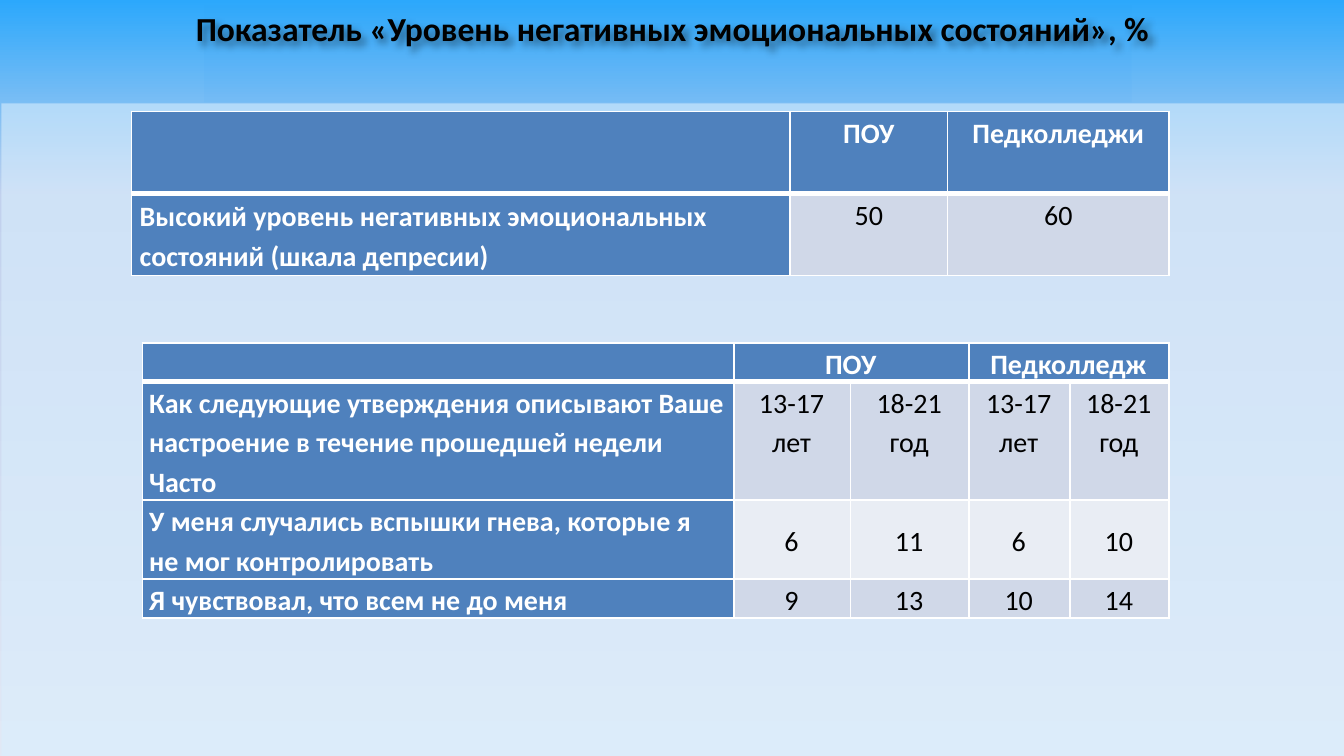
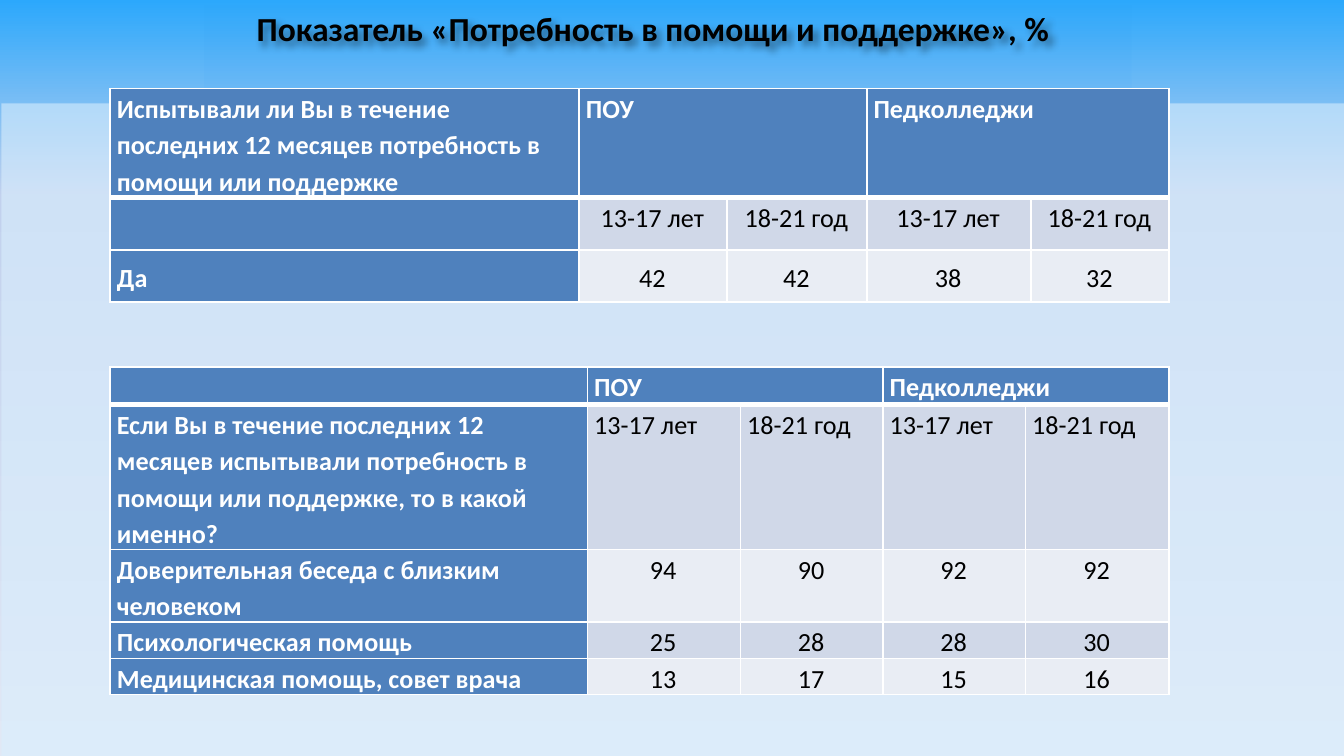
from dataclasses import dataclass

from lxml.etree import SubElement
from pptx import Presentation
from pptx.dml.color import RGBColor
from pptx.enum.shapes import MSO_SHAPE
from pptx.enum.text import MSO_ANCHOR, PP_ALIGN
from pptx.oxml import parse_xml
from pptx.oxml.ns import nsdecls, qn
from pptx.util import Inches, Pt


@dataclass(frozen=True)
class Theme:
    font: str = "Calibri"
    title_size: int = 18
    sky: tuple = ((0, "2CA8FC"), (26, "C2D1ED"), (100, "E1E8F5"))
    haze: str = "DAEFFE"
    title_band: str = "299AF7"
    accent: str = "4F81BD"
    row_bands: tuple = ("E9EDF4", "D0D8E8")
    light: str = "FFFFFF"
    dark: str = "000000"
    line_spacing: float = 1.15
    border: int = 1
    header_border: int = 3


@dataclass(frozen=True)
class Band:
    left: float
    top: float
    width: float
    height: float
    color: str
    opacity: int


@dataclass(frozen=True)
class SurveyTable:
    left: float
    top: float
    columns: tuple
    row_heights: tuple
    rows: tuple
    text_size: int
    header_align: PP_ALIGN = PP_ALIGN.CENTER
    ages_align: PP_ALIGN = PP_ALIGN.CENTER
    value_anchor: MSO_ANCHOR = MSO_ANCHOR.MIDDLE
    margin_left: float = 0.05

    @property
    def by_age(self) -> bool:
        return len(self.columns) == 5


@dataclass(frozen=True)
class Indicator:
    title: str
    title_width: float
    tables: tuple


THEME = Theme()
BANDS = (
    Band(0.01, 0.77, 9.99, 4.86, THEME.haze, 58),
    Band(1.52, 0.04, 6.9, 0.72, THEME.title_band, 5),
)
AGES = ("13-17 лет", "18-21 год") * 2

INDICATORS = (
    Indicator("Показатель «Уровень негативных эмоциональных состояний», %", 8.51, (
        SurveyTable(
            0.98, 0.83, (4.9, 1.17, 1.65), (0.61, 0.61),
            (
                ("", "ПОУ", "Педколледжи"),
                ("Высокий уровень негативных эмоциональных состояний (шкала депресии)",
                 "50", "60"),
            ),
            15, value_anchor=MSO_ANCHOR.TOP, margin_left=0.06,
        ),
        SurveyTable(
            1.06, 2.55, (4.4, 0.87, 0.88, 0.75, 0.74), (0.29, 0.88, 0.59, 0.29),
            (
                ("", "ПОУ", "", "Педколледж", ""),
                ("Как следующие утверждения описывают Ваше настроение "
                 "в течение прошедшей недели\nЧасто", *AGES),
                ("У меня случались вспышки гнева, которые я не мог контролировать",
                 "6", "11", "6", "10"),
                ("Я чувствовал, что всем не до меня", "9", "13", "10", "14"),
            ),
            15,
        ),
    )),
    Indicator("Показатель «Потребность в помощи и поддержке», %", 8.22, (
        SurveyTable(
            0.82, 0.66, (3.49, 1.1, 1.04, 1.22, 1.03), (0.81, 0.39, 0.39),
            (
                ("Испытывали ли Вы в течение последних 12 месяцев потребность "
                 "в помощи или поддержке", "ПОУ", "", "Педколледжи", ""),
                ("", *AGES),
                ("Да", "42", "42", "38", "32"),
            ),
            14, header_align=PP_ALIGN.LEFT,
        ),
        SurveyTable(
            0.82, 2.73, (3.55, 1.14, 1.06, 1.06, 1.07), (0.28, 1.08, 0.54, 0.27, 0.27),
            (
                ("", "ПОУ", "", "Педколледжи", ""),
                ("Если Вы в течение последних 12 месяцев испытывали потребность "
                 "в помощи или поддержке, то в какой именно?", *AGES),
                ("Доверительная беседа с близким человеком", "94", "90", "92", "92"),
                ("Психологическая помощь", "25", "28", "28", "30"),
                ("Медицинская помощь, совет врача", "13", "17", "15", "16"),
            ),
            14, header_align=PP_ALIGN.LEFT, ages_align=PP_ALIGN.LEFT,
            value_anchor=MSO_ANCHOR.TOP,
        ),
    )),
)


def rgb(color: str) -> RGBColor:
    return RGBColor.from_string(color)


def paint_sky(master) -> None:
    """Give every slide the three-colour vertical gradient."""
    fill = master.background.fill
    fill.gradient()
    fill.gradient_angle = 270
    stops = master.element.find(".//" + qn("a:gsLst"))
    for stop in list(stops):
        stops.remove(stop)
    for position, color in THEME.sky:
        stop = SubElement(stops, qn("a:gs"), pos=str(position * 1000))
        SubElement(stop, qn("a:srgbClr"), val=color)


def add_band(slide, band: Band) -> None:
    shape = slide.shapes.add_shape(
        MSO_SHAPE.RECTANGLE, Inches(band.left), Inches(band.top),
        Inches(band.width), Inches(band.height))
    shape.shadow.inherit = False
    shape.line.fill.background()
    shape.fill.solid()
    shape.fill.fore_color.rgb = rgb(band.color)
    color = shape.element.spPr.find(qn("a:solidFill"))[0]
    SubElement(color, qn("a:alpha"), val=str(band.opacity * 1000))


def set_font(paragraph, size: int, color: str, bold: bool) -> None:
    font = paragraph.font
    font.name = THEME.font
    font.size = Pt(size)
    font.bold = bold
    font.color.rgb = rgb(color)


def add_title(slide, text: str, width: float) -> None:
    """Write the title; the unfilled box casts its shadow from the letters."""
    box = slide.shapes.add_textbox(
        Inches(0.75), Inches(0.06), Inches(width), Inches(0.46))
    box.element.spPr.append(parse_xml(
        f'<a:effectLst {nsdecls("a")}><a:outerShdw blurRad="50800" dist="38100" '
        f'dir="2700000" algn="tl" rotWithShape="0"><a:srgbClr val="{THEME.dark}">'
        '<a:alpha val="43000"/></a:srgbClr></a:outerShdw></a:effectLst>'))
    frame = box.text_frame
    frame.word_wrap = True
    frame.margin_top = frame.margin_bottom = 0
    frame.text = text
    paragraph = frame.paragraphs[0]
    paragraph.alignment = PP_ALIGN.CENTER
    set_font(paragraph, THEME.title_size, THEME.dark, True)


def set_borders(cell, row: int) -> None:
    """White grid with a heavier rule under the header row."""
    heavy_sides = {0: "B", 1: "T"}
    properties = cell._tc.get_or_add_tcPr()
    for index, side in enumerate("LRTB"):
        heavy = heavy_sides.get(row) == side
        width = Pt(THEME.header_border if heavy else THEME.border)
        properties.insert(index, parse_xml(
            f'<a:ln{side} {nsdecls("a")} w="{width}"><a:solidFill>'
            f'<a:srgbClr val="{THEME.light}"/></a:solidFill></a:ln{side}>'))


def fill_cell(cell, text: str, row: int, column: int, survey: SurveyTable) -> None:
    is_label = column == 0
    is_head = row == 0 or is_label
    is_age = row == 1 and survey.by_age
    cell.fill.solid()
    cell.fill.fore_color.rgb = rgb(THEME.accent if is_head else THEME.row_bands[row % 2])
    set_borders(cell, row)
    cell.margin_left, cell.margin_right = Inches(survey.margin_left), Inches(0.06)
    cell.margin_top = cell.margin_bottom = 0
    if is_label:
        align, anchor = PP_ALIGN.LEFT, MSO_ANCHOR.MIDDLE
    elif row == 0:
        align, anchor = survey.header_align, MSO_ANCHOR.TOP
    elif is_age:
        align, anchor = survey.ages_align, MSO_ANCHOR.TOP
    else:
        align, anchor = PP_ALIGN.CENTER, survey.value_anchor
    cell.vertical_anchor = anchor
    cell.text_frame.text = text
    for paragraph in cell.text_frame.paragraphs:
        paragraph.alignment = align
        paragraph.line_spacing = THEME.line_spacing
        set_font(paragraph, survey.text_size,
                 THEME.light if is_head else THEME.dark, is_head)
        if not text:
            end = paragraph._p.get_or_add_endParaRPr()
            end.set("sz", str(survey.text_size * 100))


def add_survey_table(slide, survey: SurveyTable) -> None:
    table = slide.shapes.add_table(
        len(survey.rows), len(survey.columns), Inches(survey.left), Inches(survey.top),
        Inches(sum(survey.columns)), Inches(sum(survey.row_heights))).table
    for column, width in zip(table.columns, survey.columns):
        column.width = Inches(width)
    for row, height in zip(table.rows, survey.row_heights):
        row.height = Inches(height)
    for r, texts in enumerate(survey.rows):
        for c, text in enumerate(texts):
            fill_cell(table.cell(r, c), text, r, c, survey)
    if survey.by_age:
        for first in (1, 3):
            table.cell(0, first).merge(table.cell(0, first + 1))


def main() -> None:
    deck = Presentation()
    deck.slide_width = Inches(10)
    deck.slide_height = deck.slide_width * 9 // 16
    paint_sky(deck.slide_master)
    for indicator in INDICATORS:
        slide = deck.slides.add_slide(deck.slide_layouts[6])
        for band in BANDS:
            add_band(slide, band)
        add_title(slide, indicator.title, indicator.title_width)
        for survey in indicator.tables:
            add_survey_table(slide, survey)
    deck.save("out.pptx")


if __name__ == "__main__":
    main()
